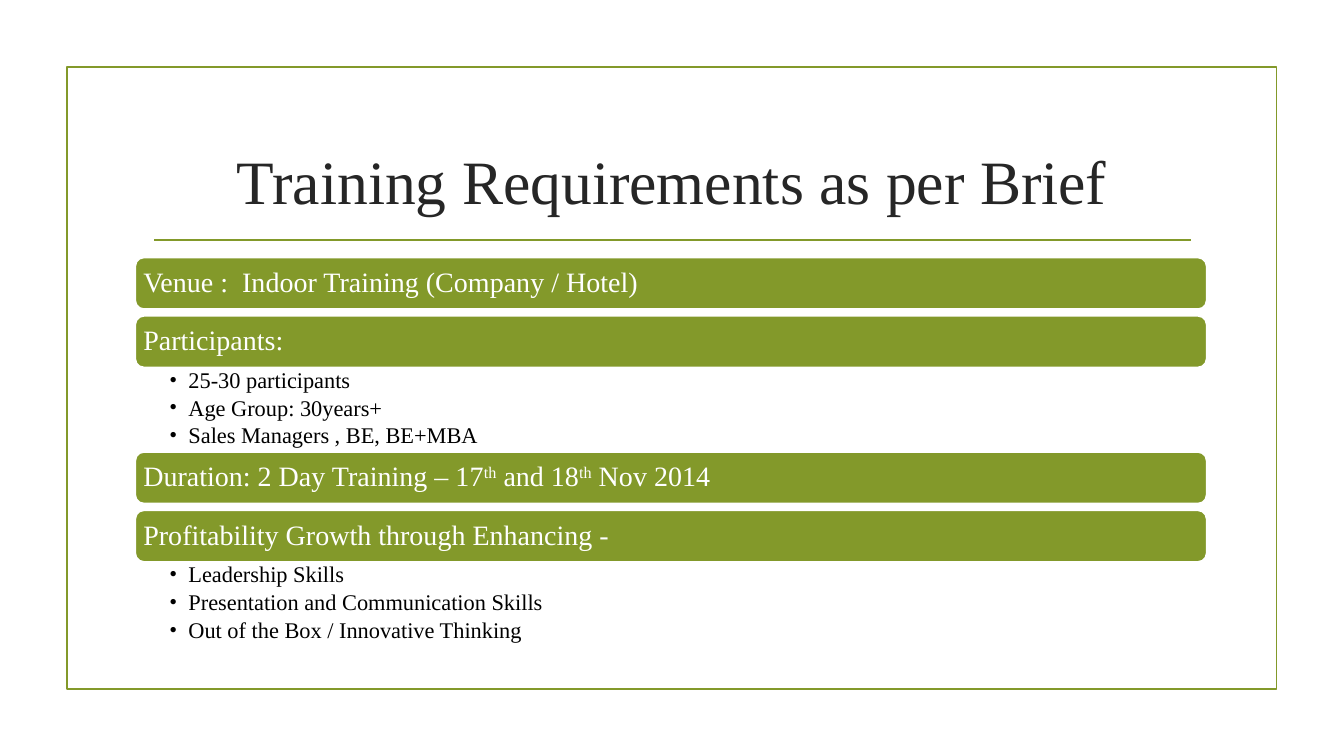
from lxml import etree
from pptx import Presentation
from pptx import util as u
from pptx.dml import color
from pptx.enum import shapes, text
from pptx.oxml import ns

FONT = "Times New Roman"
GREEN, WHITE, BLACK, DARK = "83992A", "FFFFFF", "000000", "262626"

BAR_LEFT, BAR_WIDTH, BAR_HEIGHT = 3.41, 27, 1.3
FIRST_TOP, BAR_PITCH = 6.49, 1.47
LIST_OFFSET, LIST_HEIGHT, LIST_EXTRA = 1.31, 2.1, 1.96

# Each section has a heading, as (text, is superscript) pieces, and its bullets.
SECTIONS = [
    ([("Venue :  Indoor Training (Company / Hotel)", False)], []),
    ([("Participants:", False)],
     ["25-30 participants", "Age Group: 30years+", "Sales Managers , BE, BE+MBA"]),
    ([("Duration: 2 Day Training – 17", False), ("th", True), (" and 18", False),
      ("th", True), (" Nov 2014", False)], []),
    ([("Profitability Growth through Enhancing -", False)],
     ["Leadership Skills", "Presentation and Communication Skills",
      "Out of the Box / Innovative Thinking"]),
]


def rgb(value):
    return color.RGBColor.from_string(value)


def add_bullet(paragraph, indent):
    properties = paragraph._p.get_or_add_pPr()
    properties.set("marL", str(u.Cm(indent)))
    properties.set("indent", str(-u.Cm(indent)))
    etree.SubElement(properties, ns.qn("a:buFont")).set("typeface", FONT)
    etree.SubElement(properties, ns.qn("a:buChar")).set("char", "•")


def write(shape, paragraphs, size, ink, align=text.PP_ALIGN.LEFT,
          anchor=text.MSO_ANCHOR.MIDDLE, insets=(0.25, 0.13, 0.25, 0.13),
          spacing=0.9, after=0, bullet_indent=None):
    """Fill a shape with paragraphs, each a list of (text, is superscript)."""
    frame = shape.text_frame
    frame.word_wrap = True
    frame.vertical_anchor = anchor
    frame.margin_left, frame.margin_top, frame.margin_right, frame.margin_bottom = map(u.Cm, insets)
    for index, pieces in enumerate(paragraphs):
        paragraph = frame.add_paragraph() if index else frame.paragraphs[0]
        paragraph.alignment = align
        paragraph.line_spacing = spacing
        paragraph.space_after = u.Pt(after)
        if bullet_indent:
            add_bullet(paragraph, bullet_indent)
        paragraph.font.name = FONT
        paragraph.font.size = u.Pt(size)
        for words, superscript in pieces:
            run = paragraph.add_run()
            run.text = words
            run.font.name = FONT
            run.font.size = u.Pt(size)
            run.font.color.rgb = rgb(ink)
            if superscript:
                run._r.get_or_add_rPr().set("baseline", "30000")


class BriefSlide:
    def __init__(self, presentation):
        self.slide = presentation.slides.add_slide(presentation.slide_layouts[6])
        self.line_width = u.Pt(1.25)

    def box(self, kind, left, top, width, height, line, fill=None):
        shape = self.slide.shapes.add_shape(kind, *map(u.Cm, (left, top, width, height)))
        shape.shadow.inherit = False
        shape.line.color.rgb = rgb(line)
        shape.line.width = self.line_width
        if fill:
            shape.fill.solid()
            shape.fill.fore_color.rgb = rgb(fill)
        else:
            shape.fill.background()
        return shape

    def rule(self, left, right, y):
        line = self.slide.shapes.add_connector(
            shapes.MSO_CONNECTOR.STRAIGHT, *map(u.Cm, (left, y, right, y)))
        line.line.color.rgb = rgb(GREEN)
        line.line.width = self.line_width
        etree.SubElement(line._element.spPr, ns.qn("a:effectLst"))

    def text_box(self, left, top, width, height, paragraphs, **style):
        shape = self.slide.shapes.add_textbox(*map(u.Cm, (left, top, width, height)))
        write(shape, paragraphs, **style)

    def heading_bar(self, top, pieces):
        bar = self.box(shapes.MSO_SHAPE.ROUNDED_RECTANGLE, BAR_LEFT, top,
                       BAR_WIDTH, BAR_HEIGHT, line=WHITE, fill=GREEN)
        write(bar, [pieces], size=20, ink=WHITE, insets=(0.14,) * 4)

    def bullet_list(self, top, items):
        self.text_box(BAR_LEFT, top, BAR_WIDTH, LIST_HEIGHT,
                      [[(item, False)] for item in items], size=16, ink=BLACK,
                      anchor=text.MSO_ANCHOR.TOP, insets=(0.86, 0.03, 0.4, 0.03),
                      after=2.5, bullet_indent=0.48)


def main():
    presentation = Presentation()
    presentation.slide_width, presentation.slide_height = u.Cm(33.87), u.Cm(19.05)
    brief = BriefSlide(presentation)
    brief.box(shapes.MSO_SHAPE.RECTANGLE, 1.69, 1.69, 30.48, 15.67, line=GREEN)
    brief.rule(3.89, 30.01, 6.05)
    brief.text_box(3.61, 2.72, 26.67, 3.63, [[("Training Requirements as per Brief", False)]],
                   size=44, ink=DARK, align=text.PP_ALIGN.CENTER, spacing=1.0)
    top = FIRST_TOP
    for heading, items in SECTIONS:
        brief.heading_bar(top, heading)
        if items:
            brief.bullet_list(top + LIST_OFFSET, items)
            top += LIST_EXTRA
        top += BAR_PITCH
    presentation.save("out.pptx")


if __name__ == "__main__":
    main()
